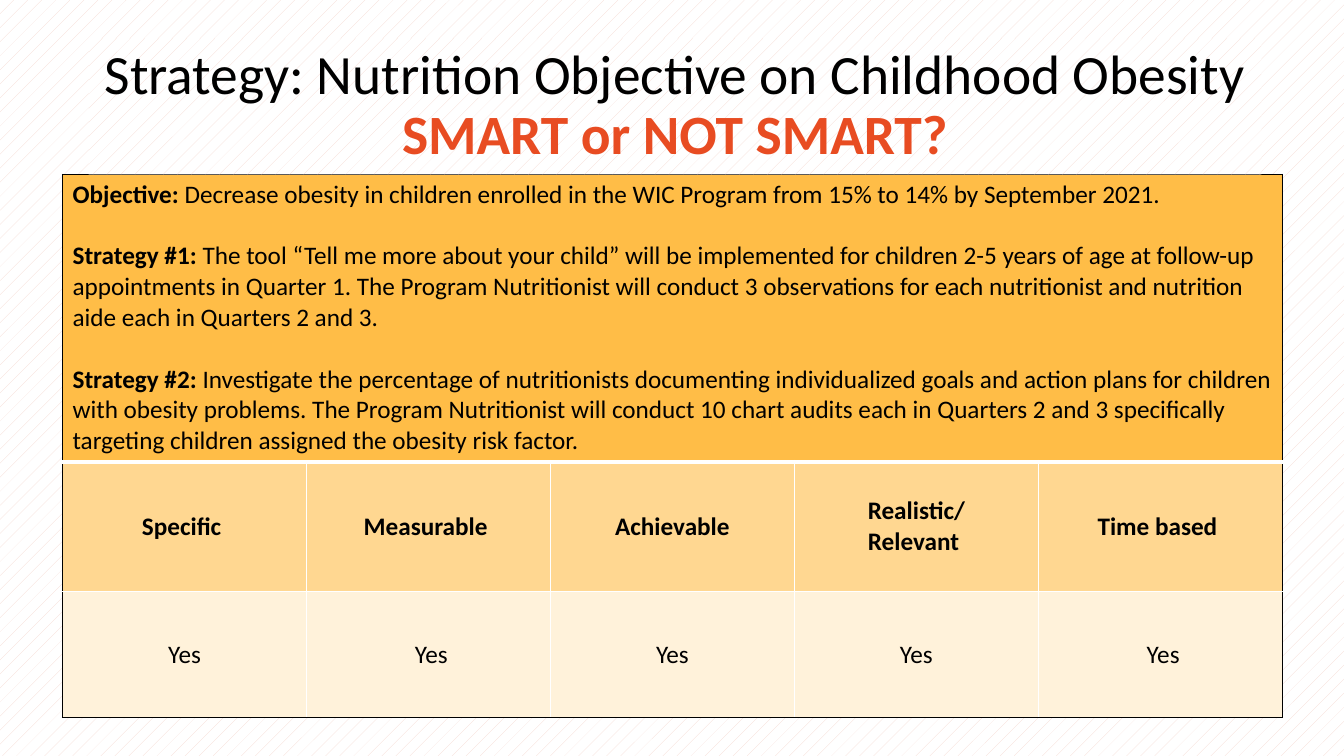
from lxml import etree
from pptx import Presentation
from pptx.dml.color import RGBColor
from pptx.enum.dml import MSO_PATTERN
from pptx.enum.text import MSO_ANCHOR, PP_ALIGN
from pptx.oxml.ns import qn
from pptx.util import Inches, Pt

DOTS = MSO_PATTERN.PERCENT_5
MIDDLE, TOP = MSO_ANCHOR.MIDDLE, MSO_ANCHOR.TOP
CENTER, LEFT = PP_ALIGN.CENTER, PP_ALIGN.LEFT
BLACK, WHITE, RED, PINK = "000000", "FFFFFF", "E84C22", "F5D8CF"
FILLS = ["FFBD47", "FFD791", "FFF2DA"]

TITLE = ("Strategy: Nutrition Objective on Childhood Obesity", "SMART or NOT SMART?")
GOALS = [
    ("Objective: ", "Decrease obesity in children enrolled in the WIC Program "
     "from 15% to 14% by September 2021."),
    ("Strategy #1: ", "The tool “Tell me more about your child” will be implemented "
     "for children 2-5 years of age at follow-up appointments in Quarter 1. "
     "The Program Nutritionist will conduct 3 observations for each nutritionist "
     "and nutrition aide each in Quarters 2 and 3."),
    ("Strategy #2: ", "Investigate the percentage of nutritionists documenting "
     "individualized goals and action plans for children with obesity problems. "
     "The Program Nutritionist will conduct 10 chart audits each in Quarters 2 and 3 "
     "specifically targeting children assigned the obesity risk factor."),
]
TESTS = [["Specific "], ["Measurable "], ["Achievable"],
         ["Realistic/", "Relevant "], ["Time based "]]
MARKS = ["Yes", " Yes", "Yes", "Yes", " Yes"]
WIDE, HIGH = 2.42, [2.85, 1.29, 1.25]


def color(code):
    return RGBColor.from_string(code)


def write(para, text, size=18, bold=False, tone=BLACK):
    run = para.add_run()
    run.text = text
    font = run.font
    font.name, font.size, font.bold = "Calibri", Pt(size), bold
    font.color.rgb = color(tone)


def dot(fill):
    fill.patterned()
    fill.pattern = DOTS
    fill.fore_color.rgb = color(PINK)
    fill.back_color.rgb = color(WHITE)


def edge(cell, sides):
    props = cell._tc.get_or_add_tcPr()
    for spot, (side, (tone, width)) in enumerate(sides.items()):
        line = etree.Element(qn("a:ln" + side), w=str(Pt(width)))
        fill = etree.SubElement(line, qn("a:solidFill"))
        etree.SubElement(fill, qn("a:srgbClr"), val=tone)
        props.insert(spot, line)


def fill_cell(cell, row, col, paras, align=CENTER, anchor=MIDDLE, span=1, gap=0):
    cell.fill.solid()
    cell.fill.fore_color.rgb = color(FILLS[row])
    cell.vertical_anchor = anchor
    frame = cell.text_frame
    for num, parts in enumerate(paras):
        para = frame.add_paragraph() if num else frame.paragraphs[0]
        para.alignment = align
        para.space_before = Pt(gap if num else 0)
        for text, bold in parts:
            write(para, text, bold=bold)
    rim, thin, thick = (BLACK, 1), (WHITE, 1), (WHITE, 3)
    edge(cell, {
        "L": rim if col == 0 else thin,
        "R": rim if col + span == len(TESTS) else thin,
        "T": [rim, thick, thin][row],
        "B": [thick, thin, rim][row],
    })


def add_grid(slide):
    frame = slide.shapes.add_table(
        len(HIGH), len(TESTS), Inches(0.62), Inches(1.73),
        Inches(WIDE * len(TESTS)), Inches(sum(HIGH)))
    grid = frame.table
    for col in grid.columns:
        col.width = Inches(WIDE)
    for row, tall in zip(grid.rows, HIGH):
        row.height = Inches(tall)
    head = grid.cell(0, 0)
    head.merge(grid.cell(0, len(TESTS) - 1))
    goals = [[(name, True), (text, False)] for name, text in GOALS]
    fill_cell(head, 0, 0, goals, LEFT, TOP, len(TESTS), 22)
    for col, (test, mark) in enumerate(zip(TESTS, MARKS)):
        fill_cell(grid.cell(1, col), 1, col, [[(text, True)] for text in test])
        fill_cell(grid.cell(2, col), 2, col, [[(mark, False)]])


def add_title(slide):
    title = slide.shapes.title
    title.left, title.top = Inches(0.88), Inches(0.38)
    title.width, title.height = Inches(11.63), Inches(1.35)
    dot(title.fill)
    frame = title.text_frame
    frame.word_wrap = True
    frame.vertical_anchor = MIDDLE
    para = frame.paragraphs[0]
    para.alignment, para.line_spacing = CENTER, 0.9
    write(para, TITLE[0], size=39.6)
    para.add_line_break()
    write(para, TITLE[1], size=39.6, bold=True, tone=RED)
    slide.shapes._spTree.append(title._element)


def main():
    deck = Presentation()
    deck.slide_width, deck.slide_height = Inches(13.33), Inches(7.5)
    slide = deck.slides.add_slide(deck.slide_layouts[5])
    dot(slide.background.fill)
    add_grid(slide)
    add_title(slide)
    deck.save("out.pptx")


if __name__ == "__main__":
    main()
